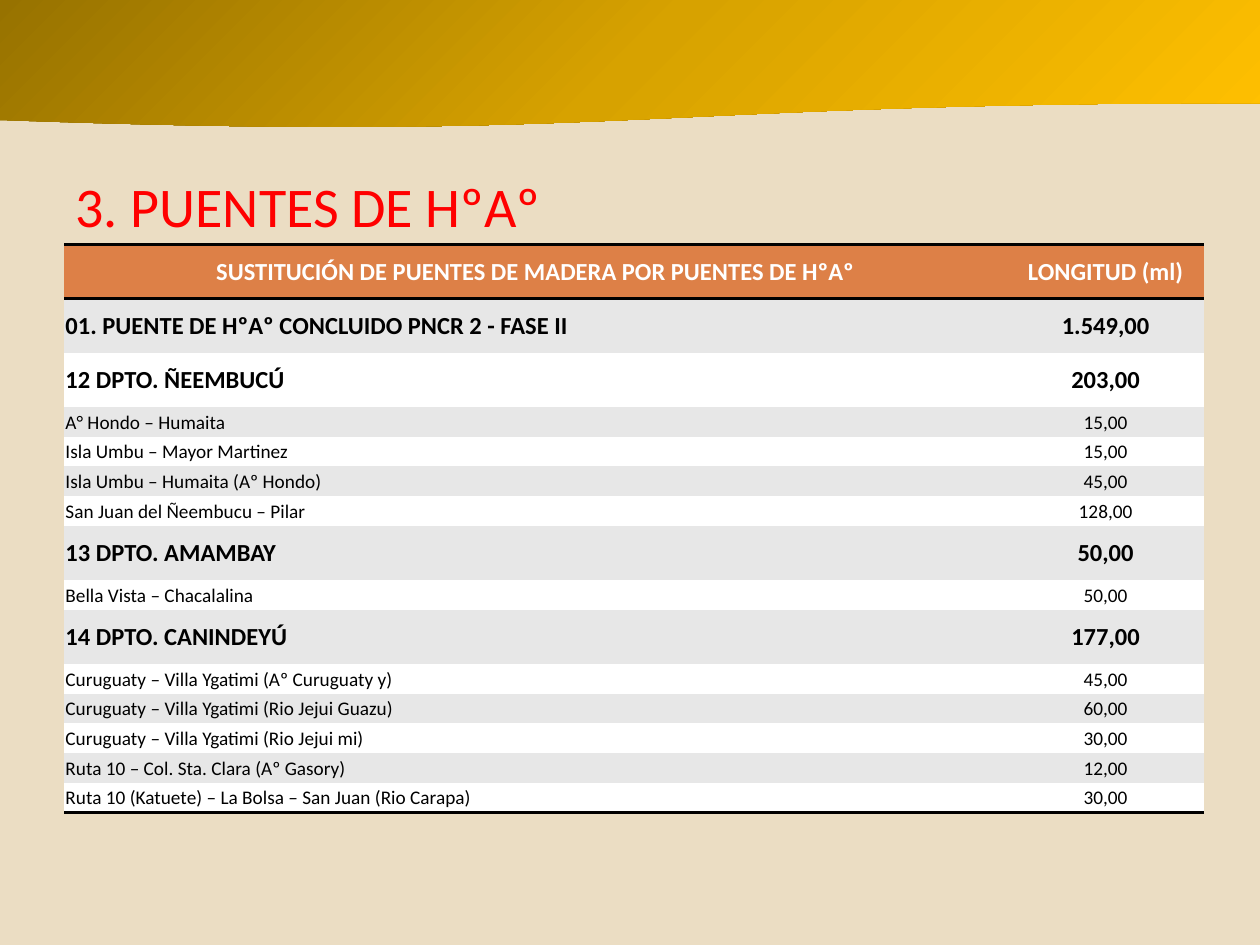
from copy import deepcopy

from lxml.etree import SubElement
from pptx import Presentation
from pptx.dml.color import RGBColor
from pptx.enum.shapes import MSO_SHAPE
from pptx.enum.text import MSO_ANCHOR, PP_ALIGN
from pptx.oxml.ns import qn
from pptx.util import Inches, Pt


def color(hex_string):
    return RGBColor.from_string(hex_string)


def add_border(cell, side):
    line = SubElement(cell._tc.get_or_add_tcPr(), qn(f"a:{side}"), w=str(Pt(2)))
    SubElement(SubElement(line, qn("a:solidFill")), qn("a:srgbClr"), val="000000")


prs = Presentation()
prs.slide_width, prs.slide_height = Inches(10), Inches(7.5)
slide = prs.slides.add_slide(prs.slide_layouts[5])
slide.background.fill.solid()
slide.background.fill.fore_color.rgb = color("EBDDC3")

# Wavy banner with a three-stop gradient, behind the title
banner = slide.shapes.add_shape(
    MSO_SHAPE.FLOWCHART_DOCUMENT, Inches(0), Inches(0), Inches(10), Inches(1.02))
banner.shadow.inherit = False
banner.line.fill.background()
banner.fill.gradient()
banner.fill.gradient_angle = 315
stop_list = banner._element.spPr.find(".//" + qn("a:gsLst"))
stop_list.insert(1, deepcopy(stop_list[0]))
banner_stops = [(0, "977200"), (0.5, "D7A200"), (1, "FFC000")]
for stop, (position, shade) in zip(banner.fill.gradient_stops, banner_stops):
    stop.position = position
    stop.color.rgb = color(shade)
slide.shapes._spTree.insert(2, banner._element)

# Title
title = slide.shapes.title
title.left, title.top = Inches(0.5), Inches(1)
title.width, title.height = Inches(9), Inches(1.25)
title.text_frame.text = "3. PUENTES DE HºAº"
title.text_frame.vertical_anchor = MSO_ANCHOR.MIDDLE
heading = title.text_frame.paragraphs[0]
heading.alignment = PP_ALIGN.LEFT
heading.font.name = "Calibri"
heading.font.size = Pt(32)
heading.font.color.rgb = color("FF0000")

# Bridges: description, length, whether it is a heading or total row
bridges = [
    ("SUSTITUCIÓN DE PUENTES DE MADERA POR PUENTES DE HºAº", "LONGITUD (ml)", True),
    ("01. PUENTE DE HºAº CONCLUIDO PNCR 2 - FASE II", "1.549,00", True),
    ("12 DPTO. ÑEEMBUCÚ", "203,00", True),
    ("A° Hondo – Humaita", "15,00", False),
    ("Isla Umbu – Mayor Martinez", "15,00", False),
    ("Isla Umbu – Humaita (Aº Hondo)", "45,00", False),
    ("San Juan del Ñeembucu – Pilar", "128,00", False),
    ("13 DPTO. AMAMBAY", "50,00", True),
    ("Bella Vista – Chacalalina", "50,00", False),
    ("14 DPTO. CANINDEYÚ", "177,00", True),
    ("Curuguaty – Villa Ygatimi (Aº Curuguaty y)", "45,00", False),
    ("Curuguaty – Villa Ygatimi (Rio Jejui Guazu)", "60,00", False),
    ("Curuguaty – Villa Ygatimi (Rio Jejui mi)", "30,00", False),
    ("Ruta 10 – Col. Sta. Clara (Aº Gasory)", "12,00", False),
    ("Ruta 10 (Katuete) – La Bolsa – San Juan (Rio Carapa)", "30,00", False),
]
last_row = len(bridges) - 1
table_frame = slide.shapes.add_table(
    len(bridges), 2, Inches(0.51), Inches(1.94), Inches(9.05), Inches(4.53))
bridge_table = table_frame.table
bridge_table.first_row = bridge_table.horz_banding = False
# Table style without fills or grid
bridge_table._tbl.tblPr.find(qn("a:tableStyleId")).text = (
    "{2D5ABB26-0587-4C30-8999-92F81FD0307C}")
bridge_table.columns[0].width = Inches(7.48)
bridge_table.columns[1].width = Inches(1.57)

for row, (description, length, is_total) in enumerate(bridges):
    bridge_table.rows[row].height = Inches(0.43 if is_total else 0.236)
    is_header = row == 0
    band = "DD8047" if is_header else ("E7E7E7" if row % 2 else "FFFFFF")
    for column, wording in enumerate((description, length)):
        cell = bridge_table.cell(row, column)
        cell.margin_left = cell.margin_right = cell.margin_top = Inches(0.01)
        cell.margin_bottom = Inches(0)
        cell.vertical_anchor = MSO_ANCHOR.MIDDLE
        # Rules above and below the header and under the last row
        if is_header:
            add_border(cell, "lnT")
        if row in (0, last_row):
            add_border(cell, "lnB")
        cell.fill.solid()
        cell.fill.fore_color.rgb = color(band)
        cell.text_frame.text = wording
        paragraph = cell.text_frame.paragraphs[0]
        centred = is_header or column == 1
        paragraph.alignment = PP_ALIGN.CENTER if centred else PP_ALIGN.LEFT
        font = paragraph.runs[0].font
        font.name = "Calibri"
        font.size = Pt(14 if is_total else 11)
        font.bold = is_total
        font.color.rgb = color("FFFFFF" if is_header else "000000")

prs.save("out.pptx")
